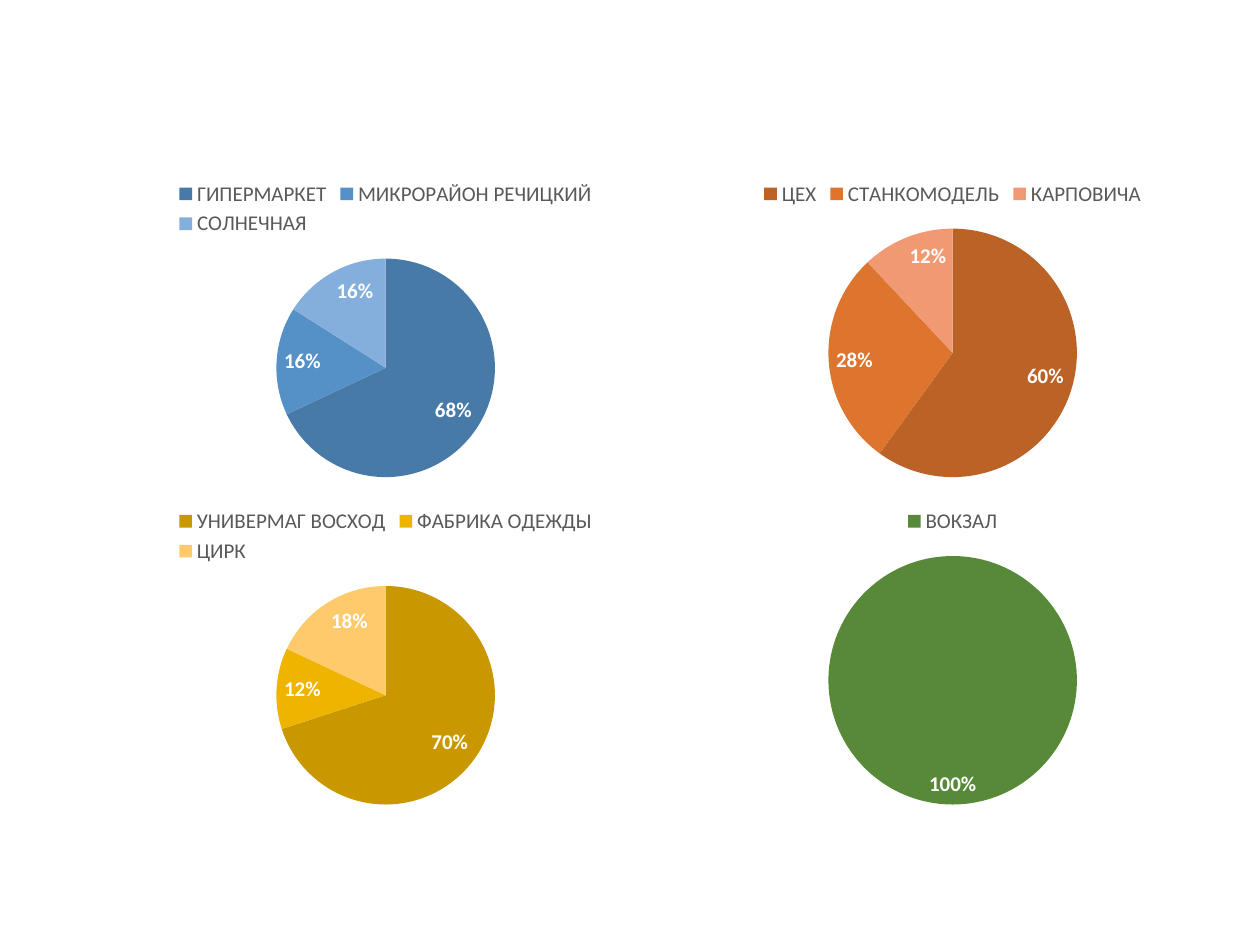
from dataclasses import dataclass

from pptx import Presentation
from pptx.chart.data import CategoryChartData
from pptx.dml.color import RGBColor
from pptx.enum.chart import XL_CHART_TYPE, XL_LABEL_POSITION, XL_LEGEND_POSITION
from pptx.util import Cm, Pt

PIE = XL_CHART_TYPE.PIE
TOP = XL_LEGEND_POSITION.TOP
INSIDE = XL_LABEL_POSITION.INSIDE_END

FONT = "Calibri"
COLORS = {
    "label": "FFFFFF",
    "legend": "595959",
    "blue dark": "487AA8",
    "blue": "5591C7",
    "blue light": "84AEDC",
    "orange dark": "BB6327",
    "orange": "DE752E",
    "orange light": "F09973",
    "gold dark": "C99800",
    "gold": "EFB400",
    "gold light": "FFCA6C",
    "green dark": "588938",
}
SHADES = ("{} dark", "{}", "{} light")

LEFT, TOP_EDGE = 1.3, 3.37
WIDTH, HEIGHT = 12.95, 6.6
COL_STEP = 11.43
COLS = 2


@dataclass
class Pie:
    hue: str
    stops: dict[str, int]


PIES = [
    Pie("blue", {"ГИПЕРМАРКЕТ": 68, "МИКРОРАЙОН РЕЧИЦКИЙ": 16, "СОЛНЕЧНАЯ": 16}),
    Pie("orange", {"ЦЕХ": 60, "СТАНКОМОДЕЛЬ": 28, "КАРПОВИЧА": 12}),
    Pie("gold", {"УНИВЕРМАГ ВОСХОД": 70, "ФАБРИКА ОДЕЖДЫ": 12, "ЦИРК": 18}),
    Pie("green", {"ВОКЗАЛ": 100}),
]


def tint(name: str) -> RGBColor:
    return RGBColor.from_string(COLORS[name])


def set_font(font, size: int, color: str, bold: bool = False) -> None:
    font.name = FONT
    font.size = Pt(size)
    font.bold = bold
    font.color.rgb = tint(color)


def draw_pie(slide, pie: Pie, row: int, col: int) -> None:
    data = CategoryChartData()
    data.categories = list(pie.stops)
    data.add_series("Series 1", list(pie.stops.values()))
    chart = slide.shapes.add_chart(
        PIE,
        Cm(LEFT + col * COL_STEP),
        Cm(TOP_EDGE + row * HEIGHT),
        Cm(WIDTH),
        Cm(HEIGHT),
        data,
    ).chart
    chart.has_title = False
    chart.font.name = FONT
    chart.font.size = Pt(10)

    chart.has_legend = True
    legend = chart.legend
    legend.position = TOP
    legend.include_in_layout = False
    set_font(legend.font, 12, "legend")

    plot = chart.plots[0]
    plot.vary_by_categories = True
    plot.has_data_labels = True
    labels = plot.data_labels
    labels.show_value = False
    labels.show_percentage = True
    labels.number_format = "0%"
    labels.number_format_is_linked = False
    labels.position = INSIDE
    set_font(labels.font, 12, "label", bold=True)

    for i, shade in enumerate(SHADES[:len(pie.stops)]):
        fill = plot.series[0].points[i].format.fill
        fill.solid()
        fill.fore_color.rgb = tint(shade.format(pie.hue))


def main() -> None:
    deck = Presentation()
    deck.slide_width, deck.slide_height = Cm(25.4), Cm(19.05)
    slide = deck.slides.add_slide(deck.slide_layouts[6])
    for i, pie in enumerate(PIES):
        draw_pie(slide, pie, *divmod(i, COLS))
    deck.save("out.pptx")


if __name__ == "__main__":
    main()
